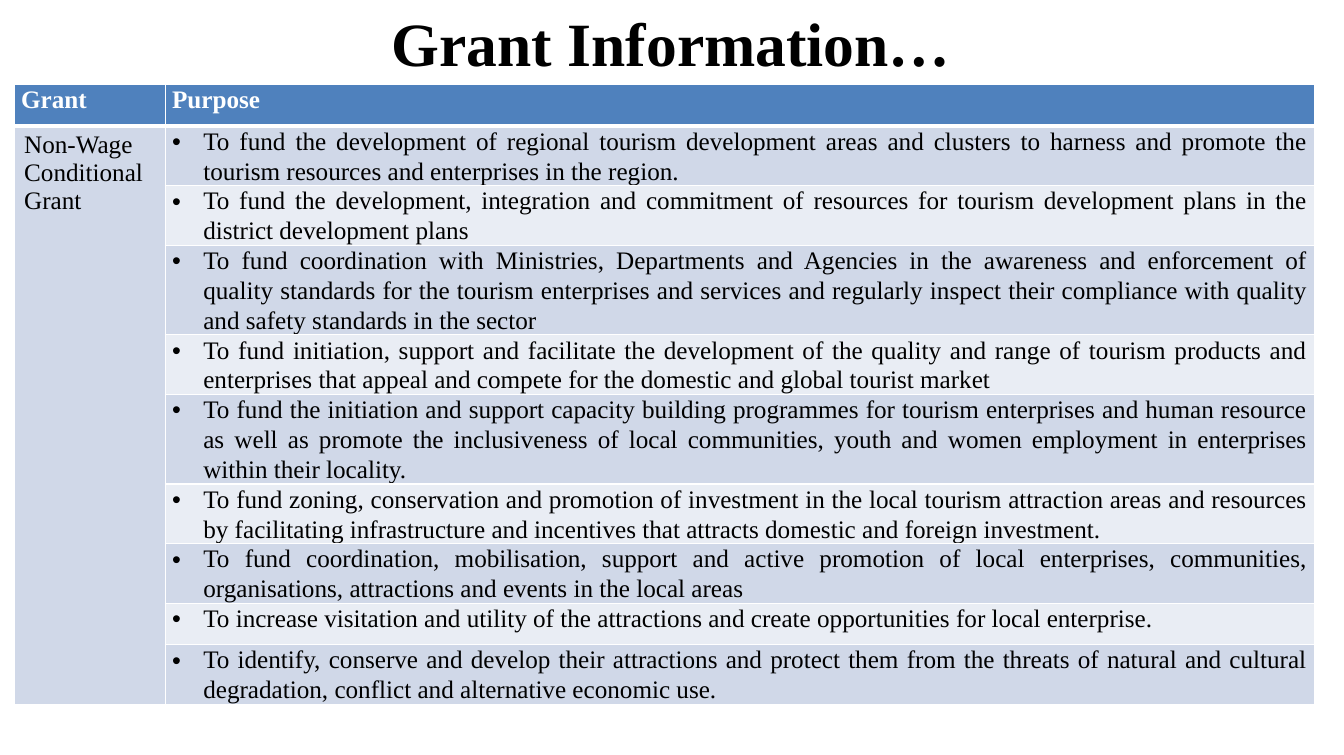
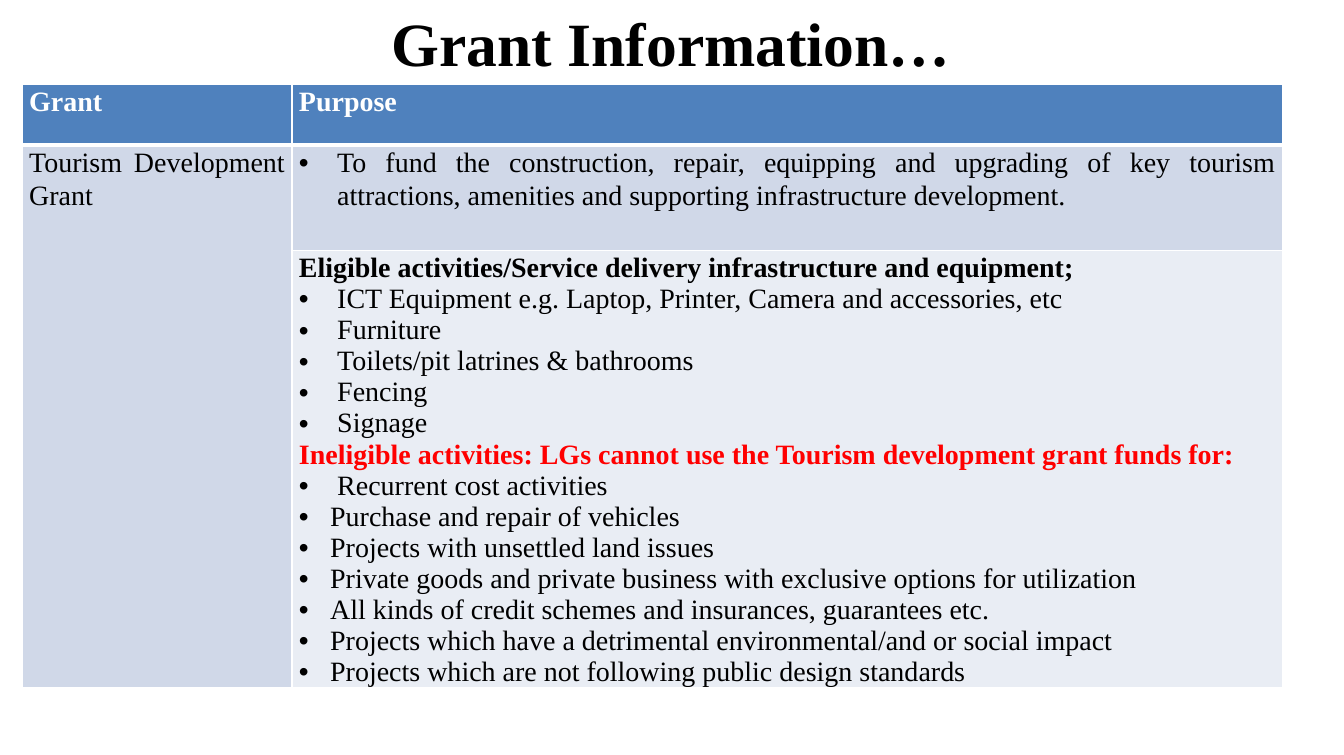
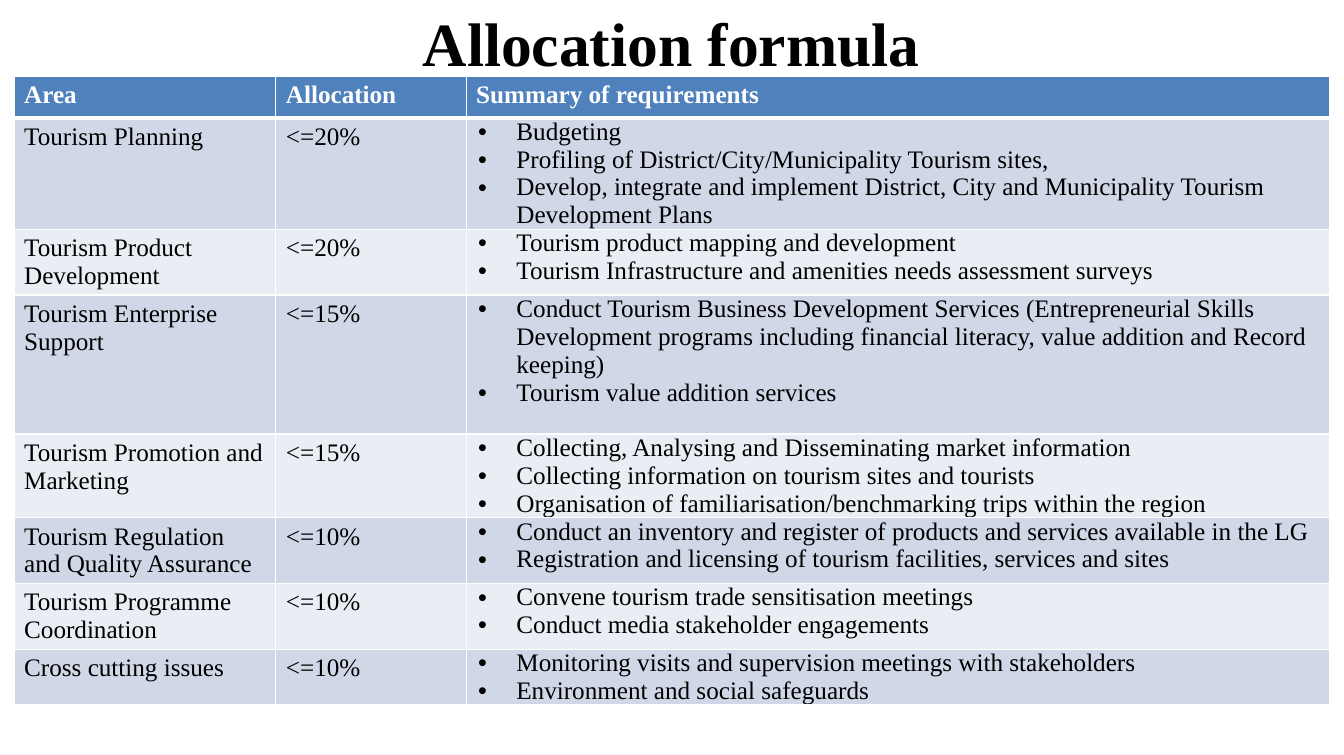
"""Build three slides of tables on grants and their allocation."""
from lxml import etree
from pptx import Presentation, util as u
from pptx.dml.color import RGBColor
from pptx.enum import text
from pptx.oxml.ns import qn

FONT = "Times New Roman"
WHITE = RGBColor(0xFF, 0xFF, 0xFF)
BLACK = RGBColor(0x00, 0x00, 0x00)
RED = RGBColor(0xFF, 0x00, 0x00)
HEAD = RGBColor(0x4F, 0x81, 0xBD)
BANDS = [RGBColor(0xD0, 0xD8, 0xE8), RGBColor(0xE9, 0xED, 0xF4)]
WIDE, HIGH = 13.35, 7.5
SLIM, ROOMY, BROAD = (0.07, 0), (0.1, 0.05), (0.12, 0)
JUST = {"align": text.PP_ALIGN.JUSTIFY, "gap": 1.07}


def write(par, words, size=18, color=BLACK, bold=False, align=text.PP_ALIGN.LEFT, gap=1, dent=0):
    par.alignment = align
    par.line_spacing = gap
    run = par.add_run()
    run.text = words
    run.font.name, run.font.size, run.font.bold = FONT, u.Pt(size), bold
    run.font.color.rgb = color
    if dent:
        prop = par._p.get_or_add_pPr()
        prop.set("marL", str(u.Inches(dent)))
        prop.set("indent", str(-u.Inches(dent)))
        etree.SubElement(prop, qn("a:buFont"), typeface="Arial")
        etree.SubElement(prop, qn("a:buChar"), char="•")


def edge(cell, side, width):
    line = etree.SubElement(cell._tc.get_or_add_tcPr(), qn("a:ln" + side), w=str(u.Pt(width)))
    fill = etree.SubElement(line, qn("a:solidFill"))
    etree.SubElement(fill, qn("a:srgbClr"), val=str(WHITE))


aims = [
    "To fund the development of regional tourism development areas and clusters to harness and promote the tourism resources and enterprises in the region.",
    "To fund the development, integration and commitment of resources for tourism development plans in the district development plans",
    "To fund coordination with Ministries, Departments and Agencies in the awareness and enforcement of quality standards for the tourism enterprises and services and regularly inspect their compliance with quality and safety standards in the sector",
    "To fund initiation, support and facilitate the development of the quality and range of tourism products and enterprises that appeal and compete for the domestic and global tourist market",
    "To fund the initiation and support capacity building programmes for tourism enterprises and human resource as well as promote the inclusiveness of local communities, youth and women employment in enterprises within their locality.",
    "To fund zoning, conservation and promotion of investment in the local tourism attraction areas and resources by facilitating infrastructure and incentives that attracts domestic and foreign investment.",
    "To fund coordination, mobilisation, support and active promotion of local enterprises, communities, organisations, attractions and events in the local areas",
    "To increase visitation and utility of the attractions and create opportunities for local enterprise.",
    "To identify, conserve and develop their attractions and protect them from the threats of natural and cultural degradation, conflict and alternative economic use.",
]
build = "To fund the construction, repair, equipping and upgrading of key tourism attractions, amenities and supporting infrastructure development."
allow = [
    "ICT Equipment e.g. Laptop, Printer, Camera and accessories, etc",
    "Furniture",
    "Toilets/pit latrines & bathrooms",
    "Fencing",
    "Signage",
]
deny = [
    "Purchase and repair of vehicles",
    "Projects with unsettled land issues",
    "Private goods and private business with exclusive options for utilization",
    "All kinds of credit schemes and insurances, guarantees etc.",
    "Projects which have a detrimental environmental/and or social impact",
    "Projects which are not following public design standards",
]
rules = [
    [("Eligible activities/Service delivery infrastructure and equipment;", {**JUST, "bold": True})],
    [(item, {"dent": 0.38}) for item in allow],
    [("Ineligible activities: LGs cannot use the Tourism development grant funds for:", {"color": RED, "bold": True})],
    [("Recurrent cost activities", {"dent": 0.38})],
    [(item, {"dent": 0.31}) for item in deny],
]
shares = [
    ("Tourism Planning", 20, [
        "Budgeting",
        "Profiling of District/City/Municipality Tourism sites,",
        "Develop, integrate and implement District, City and Municipality Tourism Development Plans"]),
    ("Tourism Product Development", 20, [
        "Tourism product mapping and development",
        "Tourism Infrastructure and amenities needs assessment surveys"]),
    ("Tourism Enterprise Support", 15, [
        "Conduct Tourism Business Development Services (Entrepreneurial Skills Development programs including financial literacy, value addition and Record keeping)",
        "Tourism value addition services"]),
    ("Tourism Promotion and Marketing", 15, [
        "Collecting, Analysing and Disseminating market information",
        "Collecting information on tourism sites and tourists",
        "Organisation of familiarisation/benchmarking trips within the region"]),
    ("Tourism Regulation and Quality Assurance", 10, [
        "Conduct an inventory and register of products and services available in the LG",
        "Registration and licensing of tourism facilities, services and sites"]),
    ("Tourism Programme Coordination", 10, [
        "Convene tourism trade sensitisation meetings",
        "Conduct media stakeholder engagements"]),
    ("Cross cutting issues", 10, [
        "Monitoring visits and supervision meetings with stakeholders",
        "Environment and social safeguards"]),
]

pair = [(SLIM, [(word, JUST)]) for word in ("Grant", "Purpose")]
wage = [[None, (SLIM, [(aim, {**JUST, "dent": 0.31})])] for aim in aims]
wage[0][0] = (ROOMY, [("Non-Wage Conditional Grant", {})])
grant = [
    [(SLIM, [("Tourism Development Grant", JUST)]), (SLIM, [(build, {**JUST, "dent": 0.38})])],
    [None, (SLIM, sum(rules, []))],
]
trio = [(ROOMY, [(word, {})]) for word in ("Area", "Allocation", "Summary of requirements")]
split = [
    [(ROOMY, [(area, {})]), (ROOMY, [(f"<={part}%", {})]), (BROAD, [(task, {"dent": 0.38}) for task in tasks])]
    for area, part, tasks in shares
]
pages = [
    ("Grant Information…", 0.14, 0.84, 18, [1.5, 11.42],
     [0.41, 0.59, 0.59, 0.89, 0.59, 0.89, 0.59, 0.59, 0.41, 0.59], [pair] + wage),
    ("Grant Information…", 0.22, 0.84, 20, [2.68, 9.84], [0.6, 1.05, 4.34], [pair] + grant),
    ("Allocation formula", 0.14, 0.76, 18, [2.6, 1.89, 8.58],
     [0.41, 1.1, 0.65, 1.38, 0.83, 0.65, 0.65, 0.55], [trio] + split),
]

deck = Presentation()
deck.slide_width, deck.slide_height = u.Inches(WIDE), u.Inches(HIGH)

for name, left, top, size, cols, tall, rows in pages:
    slide = deck.slides.add_slide(deck.slide_layouts[5])
    title = slide.shapes.title
    title.left, title.top, title.width, title.height = map(u.Inches, (2.81, 0, 7.72, 0.84))
    title.text_frame.auto_size = text.MSO_AUTO_SIZE.NONE
    title.text_frame.vertical_anchor = text.MSO_ANCHOR.MIDDLE
    write(title.text_frame.paragraphs[0], name, size=44, bold=True, align=text.PP_ALIGN.CENTER)

    box = map(u.Inches, (left, top, sum(cols), sum(tall)))
    table = slide.shapes.add_table(len(rows), len(cols), *box).table
    for col, width in zip(table.columns, cols):
        col.width = u.Inches(width)
    for row, height in zip(table.rows, tall):
        row.height = u.Inches(height)
    for r, row in enumerate(rows):
        look = {"color": WHITE, "bold": True} if r == 0 else {}
        for c, item in enumerate(row):
            cell = table.cell(r, c)
            for side in "LRTB":
                thick = (side, r) in (("B", 0), ("T", 1))
                edge(cell, side, 3 if thick else 1)
            cell.fill.solid()
            cell.fill.fore_color.rgb = BANDS[(r - 1) % 2] if r else HEAD
            if item is None:
                continue
            (side, end), lines = item
            cell.margin_left = cell.margin_right = u.Inches(side)
            cell.margin_top = cell.margin_bottom = u.Inches(end)
            for n, (words, form) in enumerate(lines):
                frame = cell.text_frame
                par = frame.add_paragraph() if n else frame.paragraphs[0]
                write(par, words, **{"size": size, **look, **form})
    if rows[-1][0] is None:
        table.cell(1, 0).merge(table.cell(len(rows) - 1, 0))

deck.save("out.pptx")
